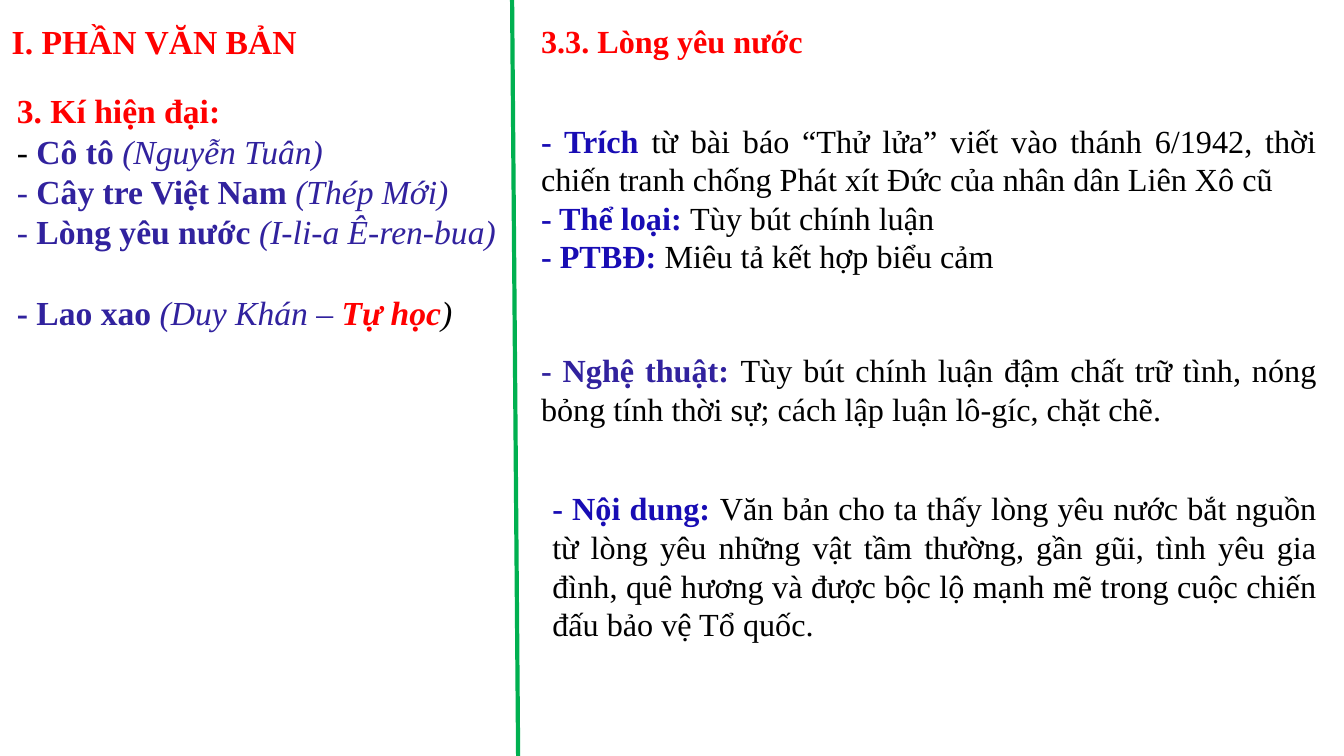
from dataclasses import dataclass

import pptx
import pptx.dml.color
import pptx.enum.shapes
import pptx.enum.text
import pptx.oxml
import pptx.oxml.ns
import pptx.util

Pt = pptx.util.Pt
Align = pptx.enum.text.PP_ALIGN
Anchor = pptx.enum.text.MSO_ANCHOR

FONT = "Times New Roman"
RED = "FF0000"
BLACK = "000000"
INDIGO = "31229E"
BLUE = "180CB4"
GREEN = "00B050"
WHITE = "FFFFFF"
HEADING_SIZE = 24
BODY_SIZE = 23
LIST_LINE = 28.8
COLUMN_LEFT = 379.4
COLUMN_RIGHT = 948.2


@dataclass(frozen=True)
class Run:
    text: str
    color: str = BLACK
    bold: bool = False
    italic: bool = False


@dataclass(frozen=True)
class Line:
    runs: tuple[Run, ...]
    space_before: float = 0


@dataclass(frozen=True)
class Block:
    left: float
    top: float
    width: float
    height: float
    lines: tuple[Line, ...]
    size: float = BODY_SIZE
    align: Align = Align.JUSTIFY
    anchor: Anchor = Anchor.TOP
    wrap: bool = True
    panel: bool = False
    bottom_inset: float = 3.6


def rgb(color: str) -> pptx.dml.color.RGBColor:
    return pptx.dml.color.RGBColor.from_string(color)


def labelled(label: str, text: str, color: str = BLUE) -> Line:
    return Line((Run(f"- {label}: ", color, bold=True), Run(text)))


def work(title: str, author: str, dash_color: str = INDIGO) -> Line:
    return Line((
        Run("- ", dash_color),
        Run(f"{title} ", INDIGO, bold=True),
        Run(f"({author})", INDIGO, italic=True),
    ))


def add_block(slide: pptx.slide.Slide, block: Block) -> None:
    bounds = [Pt(value) for value in (block.left, block.top, block.width, block.height)]
    if block.panel:
        shape = slide.shapes.add_shape(pptx.enum.shapes.MSO_SHAPE.RECTANGLE, *bounds)
        shape.shadow.inherit = False
        shape.fill.solid()
        shape.fill.fore_color.rgb = rgb(WHITE)
        shape.line.fill.background()
    else:
        shape = slide.shapes.add_textbox(*bounds)
    frame = shape.text_frame
    frame.word_wrap = block.wrap
    frame.vertical_anchor = block.anchor
    frame.margin_bottom = Pt(block.bottom_inset)
    for index, line in enumerate(block.lines):
        paragraph = frame.add_paragraph() if index else frame.paragraphs[0]
        paragraph.alignment = block.align
        paragraph.space_before = Pt(line.space_before)
        for part in line.runs:
            run = paragraph.add_run()
            run.text = part.text
            run.font.name = FONT
            run.font.size = Pt(block.size)
            run.font.bold = part.bold
            run.font.italic = part.italic
            run.font.color.rgb = rgb(part.color)


def add_divider(slide: pptx.slide.Slide, top_x: float, bottom_x: float, height: float) -> None:
    divider = slide.shapes.add_connector(
        pptx.enum.shapes.MSO_CONNECTOR.STRAIGHT, Pt(top_x), Pt(0), Pt(bottom_x), Pt(height)
    )
    divider.line.color.rgb = rgb(GREEN)
    divider.line.width = Pt(3)
    properties = divider.element.find(pptx.oxml.ns.qn("p:spPr"))
    properties.append(pptx.oxml.parse_xml(f"<a:effectLst {pptx.oxml.ns.nsdecls('a')}/>"))


WORKS = Block(
    5, 59, 441.4, 212.4,
    (
        Line((Run("3. Kí hiện đại:", RED, bold=True),)),
        work("Cô tô", "Nguyễn Tuân", BLACK),
        work("Cây tre Việt Nam", "Thép Mới"),
        work("Lòng yêu nước", "I-li-a Ê-ren-bua"),
        Line(
            (
                Run("- Lao xao ", INDIGO, bold=True),
                Run("(Duy Khán – ", INDIGO, italic=True),
                Run("Tự học", RED, bold=True, italic=True),
                Run(")", italic=True),
            ),
            space_before=LIST_LINE,
        ),
    ),
    size=HEADING_SIZE, align=Align.LEFT, anchor=Anchor.MIDDLE, panel=True,
    bottom_inset=3.6 + LIST_LINE,
)

TEXTS = (
    Block(
        0, 11.5, 220.3, 36, (Line((Run("I. PHẦN VĂN BẢN", RED, bold=True),)),),
        size=HEADING_SIZE, align=Align.CENTER, wrap=False,
    ),
    Block(
        COLUMN_LEFT, 11.5, 324.7, 35.3,
        (Line((Run("3.3. Lòng yêu nước", RED, bold=True),)),), align=Align.LEFT,
    ),
    Block(
        COLUMN_LEFT, 82.1, COLUMN_RIGHT - COLUMN_LEFT, 118.8,
        (
            Line((
                Run("- Trích ", BLUE, bold=True),
                Run(
                    "từ bài báo “Thử lửa” viết vào thánh 6/1942, thời chiến tranh "
                    "chống Phát xít Đức của nhân dân Liên Xô cũ"
                ),
            )),
            labelled("Thể loại", "Tùy bút chính luận"),
            labelled("PTBĐ", "Miêu tả kết hợp biểu cảm"),
        ),
        anchor=Anchor.MIDDLE,
    ),
    Block(
        COLUMN_LEFT, 247, COLUMN_RIGHT - COLUMN_LEFT, 62.6,
        (
            labelled(
                "Nghệ thuật",
                "Tùy bút chính luận đậm chất trữ tình, nóng bỏng tính thời sự; "
                "cách lập luận lô-gíc, chặt chẽ.",
                INDIGO,
            ),
        ),
    ),
    Block(
        387.4, 345.6, COLUMN_RIGHT - 387.4, 118.8,
        (
            labelled(
                "Nội dung",
                "Văn bản cho ta thấy lòng yêu nước bắt nguồn từ lòng yêu những vật "
                "tầm thường, gần gũi, tình yêu gia đình, quê hương và được bộc lộ "
                "mạnh mẽ trong cuộc chiến đấu bảo vệ Tổ quốc.",
            ),
        ),
    ),
)


def main() -> None:
    presentation = pptx.Presentation()
    presentation.slide_width = Pt(960)
    presentation.slide_height = Pt(540)
    slide = presentation.slides.add_slide(presentation.slide_layouts[6])
    add_block(slide, WORKS)
    add_divider(slide, 365.8, 370.1, 540)
    for block in TEXTS:
        add_block(slide, block)
    presentation.save("out.pptx")


if __name__ == "__main__":
    main()
